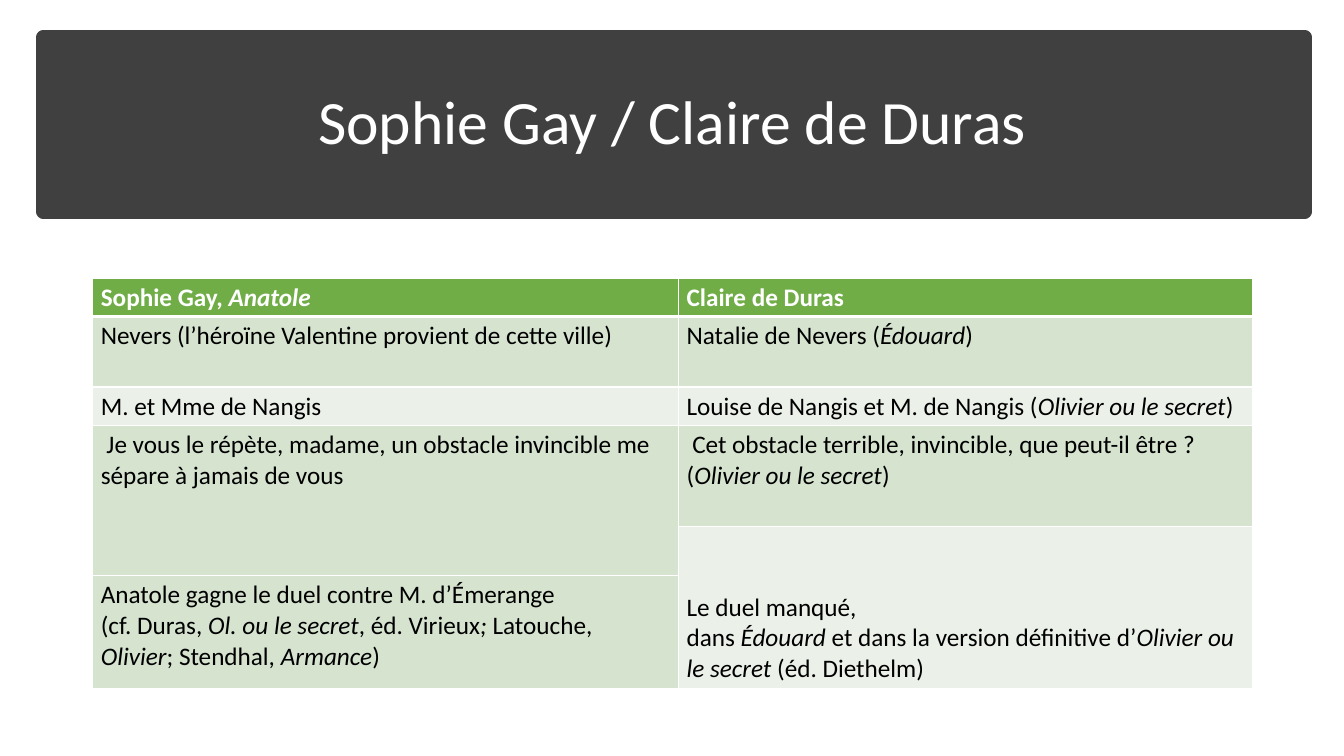
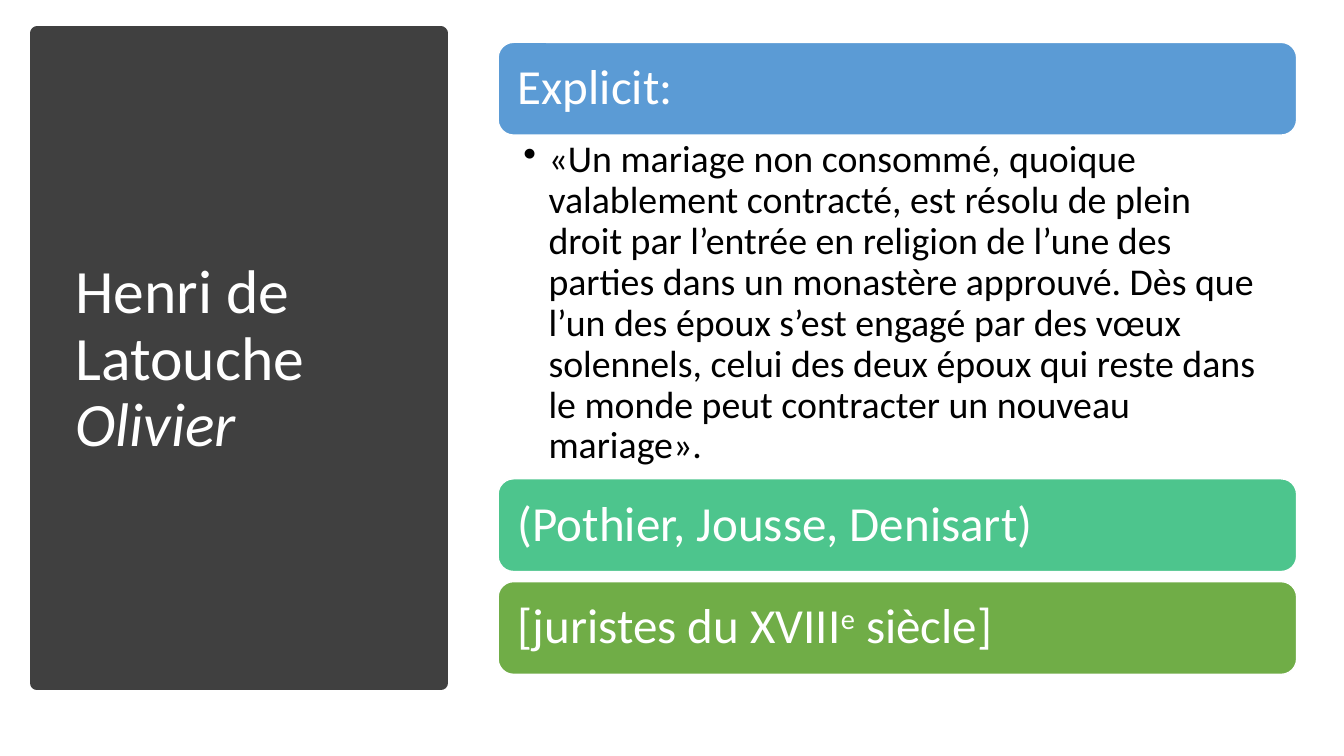
from pptx import Presentation
from pptx.dml.color import RGBColor
from pptx.enum.shapes import MSO_SHAPE
from pptx.enum.text import MSO_ANCHOR, PP_ALIGN
from pptx.oxml.ns import qn
from pptx.util import Pt
from lxml import etree

PX = 9144
FONT = "Calibri"
WHITE, BLACK, DARK = "FFFFFF", "000000", "404040"
BLUE, TEAL, GREEN = "5B9BD5", "4DC58D", "70AD47"
BAND_DARK, BAND_LIGHT = "D5E3CF", "EBF1E9"
RECTANGLE, ROUNDED = MSO_SHAPE.RECTANGLE, MSO_SHAPE.ROUNDED_RECTANGLE
TOP, MIDDLE, BOTTOM = MSO_ANCHOR.TOP, MSO_ANCHOR.MIDDLE, MSO_ANCHOR.BOTTOM
LEFT, CENTER = PP_ALIGN.LEFT, PP_ALIGN.CENTER

COLUMN_WIDTHS = [581, 569]
ROW_HEIGHTS = [38, 70, 38, 100, 49, 112]
ROWS = [
    ("Sophie Gay, *Anatole*", "Claire de Duras"),
    ("Nevers (l’héroïne Valentine provient de cette ville)",
     "Natalie de Nevers (*Édouard*)"),
    ("M. et Mme de Nangis",
     "Louise de Nangis et M. de Nangis (*Olivier ou le secret*)"),
    (" Je vous le répète, madame, un obstacle invincible me sépare à jamais de vous",
     " Cet obstacle terrible, invincible, que peut-il être ? (*Olivier ou le secret*)"),
    (None,
     "Le duel manqué,\n"
     "dans *Édouard* et dans la version définitive d’*Olivier ou le secret *(éd. Diethelm)"),
    ("Anatole gagne le duel contre M. d’Émerange\n"
     "(cf. Duras, *Ol. ou le secret*, éd. Virieux*; *Latouche, *Olivier*; Stendhal, *Armance*)",
     None),
]
QUOTE = ("«Un mariage non consommé, quoique valablement contracté, est résolu de plein "
         "droit par l’entrée en religion de l’une des parties dans un monastère approuvé. "
         "Dès que l’un des époux s’est engagé par des vœux solennels, celui des deux époux "
         "qui reste dans le monde peut contracter un nouveau mariage».")


def rgb(color):
    """Turn a hex string into a colour."""
    return RGBColor.from_string(color)


def px(*lengths):
    """Turn lengths in px into EMU."""
    return [length * PX for length in lengths]


def add_runs(paragraph, text):
    """Add runs: *stars* hold italics and ^carets^ hold superscript."""
    for index, piece in enumerate(text.split("*")):
        for level, part in enumerate(piece.split("^")):
            if part:
                run = paragraph.add_run()
                run.text = part
                if index % 2:
                    run.font.italic = True
                if level % 2:
                    run.font._element.set("baseline", "30000")


def write(frame, text, size, color, align=LEFT, spacing=0.9, bold=False):
    """Fill a text frame with one paragraph for each line."""
    for index, line in enumerate(text.split("\n")):
        paragraph = frame.add_paragraph() if index else frame.paragraphs[0]
        add_runs(paragraph, line)
        paragraph.alignment = align
        paragraph.line_spacing = spacing
        font = paragraph.font
        font.name, font.size, font.bold = FONT, Pt(size), bold
        font.color.rgb = rgb(color)


def set_frame(frame, anchor, margins):
    """Set wrapping, anchor and margins of a text frame."""
    frame.word_wrap = True
    frame.vertical_anchor = anchor
    (frame.margin_left, frame.margin_top,
     frame.margin_right, frame.margin_bottom) = px(*margins)


def add_box(slide, kind, box, fill, line):
    """Draw a filled shape with a thin outline."""
    shape = slide.shapes.add_shape(kind, *px(*box))
    shape.shadow.inherit = False
    shape.fill.solid()
    shape.fill.fore_color.rgb = rgb(fill)
    shape.line.color.rgb = rgb(line)
    shape.line.width = Pt(1)
    return shape


def add_title_panel(slide, box, title_box, title, align):
    """Draw the dark panel and the title upon it."""
    panel = add_box(slide, RECTANGLE, box, DARK, DARK)
    panel.line.width = Pt(10)
    frame = slide.shapes.add_textbox(*px(*title_box)).text_frame
    set_frame(frame, MIDDLE, (10, 5, 10, 5))
    write(frame, title, 44, WHITE, align)


def set_borders(cell, bottom_width):
    """Give a cell white borders."""
    properties = cell._tc.get_or_add_tcPr()
    for side, width in (("L", 1), ("R", 1), ("T", 1), ("B", bottom_width)):
        line = etree.SubElement(properties, qn(f"a:ln{side}"), w=str(Pt(width)))
        fill = etree.SubElement(line, qn("a:solidFill"))
        etree.SubElement(fill, qn("a:srgbClr"), val=WHITE)


def add_comparison_table(slide, left, top):
    """Place the table that compares the two authors."""
    size = sum(COLUMN_WIDTHS), sum(ROW_HEIGHTS)
    table = slide.shapes.add_table(
        len(ROWS), len(COLUMN_WIDTHS), *px(left, top, *size)).table
    for column, width in zip(table.columns, px(*COLUMN_WIDTHS)):
        column.width = width
    for row, height in zip(table.rows, px(*ROW_HEIGHTS)):
        row.height = height
    for row_index, texts in enumerate(ROWS):
        header = row_index == 0
        band = BAND_DARK if row_index % 2 else BAND_LIGHT
        for column_index, text in enumerate(texts):
            cell = table.cell(row_index, column_index)
            set_borders(cell, 3 if header else 1)
            cell.fill.solid()
            cell.fill.fore_color.rgb = rgb(GREEN if header else band)
            cell.margin_left, cell.margin_right = px(8, 8)
            cell.margin_top, cell.margin_bottom = px(4, 4)
            if text:
                write(cell.text_frame, text, 18, WHITE if header else BLACK,
                      spacing=1.0, bold=header)
    table.cell(3, 0).merge(table.cell(4, 0))
    table.cell(4, 1).merge(table.cell(5, 1))
    table.cell(4, 1).vertical_anchor = BOTTOM


def add_bar(slide, box, text, fill):
    """Draw a rounded heading bar."""
    bar = add_box(slide, ROUNDED, box, fill, WHITE)
    set_frame(bar.text_frame, MIDDLE, (15, 15, 15, 15))
    write(bar.text_frame, text, 35, WHITE)


def add_quote(slide, box, text):
    """Place a quotation with a hanging bullet."""
    frame = slide.shapes.add_textbox(*px(*box)).text_frame
    set_frame(frame, TOP, (25, 5, 27, 5))
    write(frame, text, 27, BLACK)
    properties = frame.paragraphs[0]._p.get_or_add_pPr()
    properties.set("marL", str(25 * PX))
    properties.set("indent", str(-25 * PX))
    bullet = etree.Element(qn("a:buChar"), char="•")
    properties.find(qn("a:defRPr")).addprevious(bullet)


def add_explicit_list(slide, left, top, width):
    """Stack the heading, its quotation and the two source bars."""
    bar_height, quote_height, gap = 92, 341, 10
    add_bar(slide, (left, top, width, bar_height), "Explicit:", BLUE)
    top += bar_height
    add_quote(slide, (left, top, width, quote_height), QUOTE)
    top += quote_height
    for text, fill in (("(Pothier, Jousse, Denisart)", TEAL),
                       ("[juristes du XVIII^e^ siècle]", GREEN)):
        add_bar(slide, (left, top, width, bar_height), text, fill)
        top += bar_height + gap


def build_comparison_slide(slide):
    """Build the slide that compares the two authors."""
    add_title_panel(slide, (43, 37, 1251, 173), (92, 51, 1150, 145),
                    "Sophie Gay / Claire de Duras", CENTER)
    add_comparison_table(slide, 92, 276)


def build_explicit_slide(slide):
    """Build the slide on the closing words of Olivier."""
    add_title_panel(slide, (37, 33, 400, 645), (65, 70, 346, 575),
                    "Henri de Latouche\n*Olivier*", LEFT)
    add_explicit_list(slide, 494, 42, 792)


def main():
    """Build and save the presentation."""
    presentation = Presentation()
    presentation.slide_width, presentation.slide_height = px(1333, 750)
    for build in (build_comparison_slide, build_explicit_slide):
        build(presentation.slides.add_slide(presentation.slide_layouts[6]))
    presentation.save("out.pptx")


if __name__ == "__main__":
    main()
